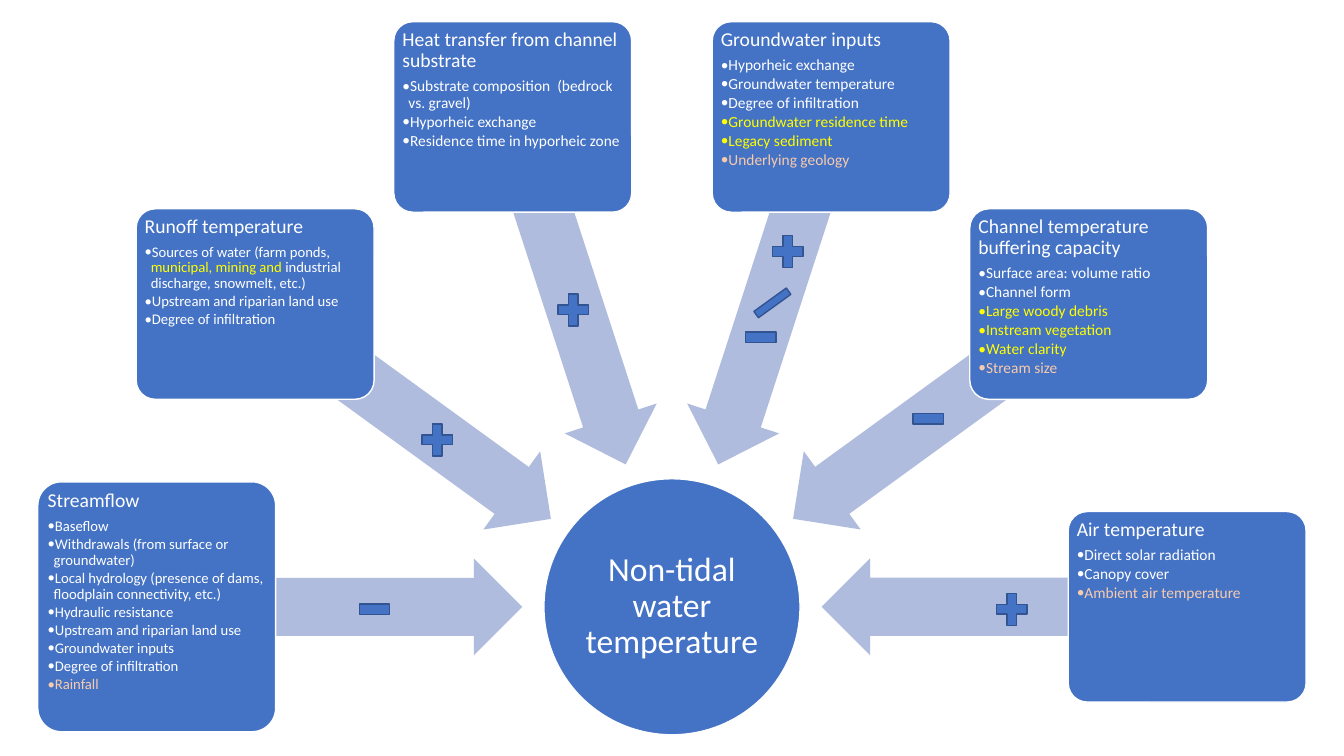
import math

import lxml.etree
import pptx
import pptx.dml.color
import pptx.enum.shapes
import pptx.enum.text
import pptx.oxml.ns
import pptx.util

Inches = pptx.util.Inches
SHAPES = pptx.enum.shapes.MSO_SHAPE
ALIGN = pptx.enum.text.PP_ALIGN
ANCHOR = pptx.enum.text.MSO_ANCHOR

BLUE, PALE_BLUE, DARK_BLUE = "4472C4", "B0BCDE", "325491"
WHITE, YELLOW, PEACH = "FFFFFF", "FFFF00", "F8CBAD"
FONT = "Calibri"

SLIDE_WIDTH, SLIDE_HEIGHT = 13.33, 7.5
HUB_X, HUB_Y, HUB_SIZE = SLIDE_WIDTH / 2, 6.02, 2.54
ARROW_RADIUS, ARROW_WIDTH, ARROW_HEIGHT = 3.3, 3.63, 0.96
CARD_RADIUS, CARD_WIDTH, CARD_HEIGHT = 5.11, 2.36, 1.89
MARK_WIDTH, MARK_HEIGHT = 0.41, 0.43

# Heading, card height, bullet size, bullets; each bullet is a list of (text, colour) runs.
FACTORS = [
    ("Streamflow", 2.48, 10.5, [
        [("Baseflow", WHITE)],
        [("Withdrawals (from surface or groundwater)", WHITE)],
        [("Local hydrology (presence of dams, floodplain connectivity, etc.)", WHITE)],
        [("Hydraulic resistance", WHITE)],
        [("Upstream and riparian land use", WHITE)],
        [("Groundwater inputs", WHITE)],
        [("Degree of infiltration", WHITE)],
        [("Rainfall", PEACH)],
    ]),
    ("Runoff temperature", CARD_HEIGHT, 10.5, [
        [("Sources of water (farm ponds, ", WHITE), ("municipal, mining and ", YELLOW),
         ("industrial discharge, snowmelt, etc.)", WHITE)],
        [("Upstream and riparian land use", WHITE)],
        [("Degree of infiltration", WHITE)],
    ]),
    ("Heat transfer from channel substrate", CARD_HEIGHT, 11, [
        [("Substrate composition  (bedrock vs. gravel)", WHITE)],
        [("Hyporheic exchange", WHITE)],
        [("Residence time in hyporheic zone", WHITE)],
    ]),
    ("Groundwater inputs", CARD_HEIGHT, 11, [
        [("Hyporheic exchange", WHITE)],
        [("Groundwater temperature", WHITE)],
        [("Degree of infiltration", WHITE)],
        [("Groundwater residence time", YELLOW)],
        [("Legacy sediment", YELLOW)],
        [("Underlying geology", PEACH)],
    ]),
    ("Channel temperature buffering capacity", CARD_HEIGHT, 11, [
        [("Surface area: volume ratio", WHITE)],
        [("Channel form", WHITE)],
        [("Large woody debris", YELLOW)],
        [("Instream vegetation", YELLOW)],
        [("Water clarity", YELLOW)],
        [("Stream size", PEACH)],
    ]),
    ("Air temperature", CARD_HEIGHT, 11, [
        [("Direct solar radiation", WHITE)],
        [("Canopy cover", WHITE)],
        [("Ambient air temperature", PEACH)],
    ]),
]

# Left and top of each sign.
PLUS_MARKS = [(9.83, 5.83), (4.13, 4.15), (5.48, 2.86), (7.61, 2.28)]
MINUS_MARKS = [(3.51, 5.83), (7.34, 3.13), (9, 3.94)]
SLASH_BOX, SLASH_ROTATION = (7.39, 2.84, 0.54, 0.33), 144.2


def rgb(value):
    return pptx.dml.color.RGBColor.from_string(value)


def set_attributes(target, values):
    for name, value in values.items():
        setattr(target, name, value)


def centred_box(angle, radius, width, height):
    """Return the box whose centre lies on a ray from the hub."""
    x = HUB_X + radius * math.cos(math.radians(angle))
    y = HUB_Y - radius * math.sin(math.radians(angle))
    return x - width / 2, y - height / 2, width, height


def add_block(slide, kind, box, fill, line=None):
    shape = slide.shapes.add_shape(kind, *map(Inches, box))
    shape.shadow.inherit = False
    shape.fill.solid()
    shape.fill.fore_color.rgb = rgb(fill)
    if line:
        shape.line.color.rgb = rgb(line)
        shape.line.width = pptx.util.Pt(1)
    else:
        shape.line.fill.background()
    return shape


def prepare_text(shape, anchor, inset):
    margins = {f"margin_{side}": Inches(inset) for side in ("left", "top", "right", "bottom")}
    set_attributes(shape.text_frame, {"word_wrap": True, "vertical_anchor": anchor, **margins})
    return shape.text_frame


def write_paragraph(paragraph, runs, size, space_after, alignment=ALIGN.LEFT):
    set_attributes(paragraph, {"alignment": alignment, "line_spacing": 0.9,
                               "space_after": pptx.util.Pt(space_after)})
    for text, color in runs:
        run = paragraph.add_run()
        run.text = text
        set_attributes(run.font, {"name": FONT, "size": pptx.util.Pt(size)})
        run.font.color.rgb = rgb(color)


def add_bullet(paragraph):
    paragraph.level = 1
    properties = paragraph._p.get_or_add_pPr()
    indent = Inches(0.06)
    properties.set("marL", str(indent))
    properties.set("indent", str(-indent))
    for tag, name, value in (("a:buFont", "typeface", FONT), ("a:buChar", "char", "•")):
        lxml.etree.SubElement(properties, pptx.oxml.ns.qn(tag)).set(name, value)


def add_hub(slide, box):
    hub = add_block(slide, SHAPES.OVAL, box, BLUE, WHITE)
    frame = prepare_text(hub, ANCHOR.MIDDLE, 0.02)
    write_paragraph(frame.paragraphs[0], [("Non-tidal water temperature", WHITE)], 24, 0,
                    ALIGN.CENTER)


def add_arrow(slide, box, angle):
    arrow = add_block(slide, SHAPES.LEFT_ARROW, box, PALE_BLUE)
    arrow.rotation = (360 - angle) % 360
    arrow.adjustments[0] = 0.6
    arrow.adjustments[1] = 0.5


def add_card(slide, box, heading, bullet_size, bullets):
    card = add_block(slide, SHAPES.ROUNDED_RECTANGLE, box, BLUE, WHITE)
    card.adjustments[0] = 0.1
    frame = prepare_text(card, ANCHOR.TOP, 0.03)
    frame.margin_top = Inches(0.02)
    write_paragraph(frame.paragraphs[0], [(heading, WHITE)], 14, 4.9)
    for runs in bullets:
        paragraph = frame.add_paragraph()
        write_paragraph(paragraph, runs, bullet_size, 0.15 * bullet_size)
        add_bullet(paragraph)


def add_marks(slide):
    for kind, places in ((SHAPES.MATH_PLUS, PLUS_MARKS), (SHAPES.MATH_MINUS, MINUS_MARKS)):
        for left, top in places:
            add_block(slide, kind, (left, top, MARK_WIDTH, MARK_HEIGHT), BLUE, DARK_BLUE)
    slash = add_block(slide, SHAPES.MATH_MINUS, SLASH_BOX, BLUE, DARK_BLUE)
    slash.rotation = SLASH_ROTATION


def main():
    presentation = pptx.Presentation()
    set_attributes(presentation, {"slide_width": Inches(SLIDE_WIDTH),
                                  "slide_height": Inches(SLIDE_HEIGHT)})
    slide = presentation.slides.add_slide(presentation.slide_layouts[6])
    add_hub(slide, centred_box(0, 0, HUB_SIZE, HUB_SIZE))
    step = 180 / (len(FACTORS) - 1)
    for index, (heading, height, bullet_size, bullets) in enumerate(FACTORS):
        angle = 180 - index * step
        add_arrow(slide, centred_box(angle, ARROW_RADIUS, ARROW_WIDTH, ARROW_HEIGHT), angle)
        add_card(slide, centred_box(angle, CARD_RADIUS, CARD_WIDTH, height),
                 heading, bullet_size, bullets)
    add_marks(slide)
    presentation.save("out.pptx")


if __name__ == "__main__":
    main()
